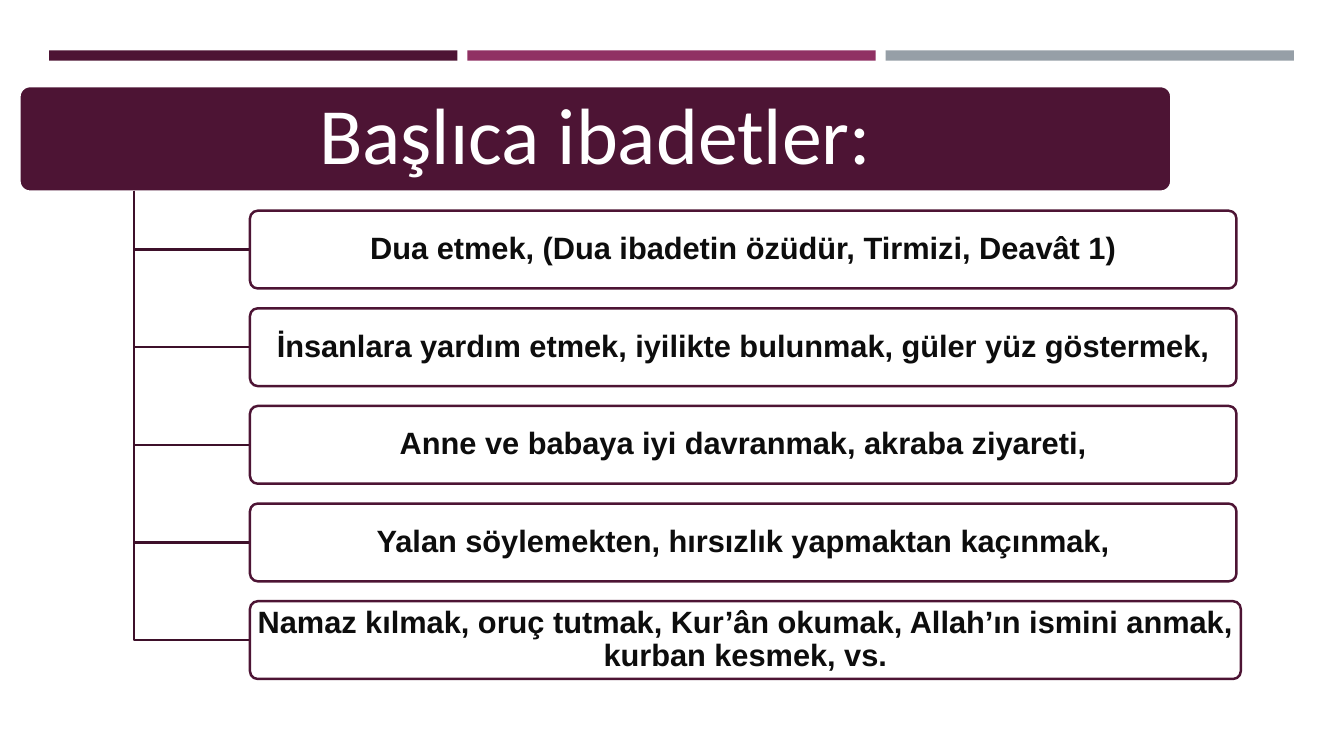
from pptx import Presentation
from pptx.dml.color import RGBColor
from pptx.enum.shapes import MSO_SHAPE
from pptx.enum.text import MSO_ANCHOR, PP_ALIGN
from pptx.oxml.ns import qn
from pptx.util import Cm, Pt
from lxml import etree

RECTANGLE = MSO_SHAPE.RECTANGLE
ROUNDED = MSO_SHAPE.ROUNDED_RECTANGLE
CENTER = PP_ALIGN.CENTER
MIDDLE = MSO_ANCHOR.MIDDLE

COLORS = {
    "plum": "4D1434",
    "magenta": "903163",
    "gray": "969FA7",
    "branch": "3E102A",
    "white": "FFFFFF",
    "ink": "0D0D0D",
}
TITLE = "Başlıca ibadetler:"
WORSHIPS = [
    "Dua etmek, (Dua ibadetin özüdür, Tirmizi, Deavât 1)",
    "İnsanlara yardım etmek, iyilikte bulunmak, güler yüz göstermek,",
    "Anne ve babaya iyi davranmak, akraba ziyareti,",
    "Yalan söylemekten, hırsızlık yapmaktan kaçınmak,",
    "Namaz kılmak, oruç tutmak, Kur’ân okumak, Allah’ın ismini anmak, kurban kesmek, vs.",
]
TRUNK_X, TRUNK_TOP = 3.38, 4.81
BOX_LEFT, BOX_TOP, BOX_HEIGHT, BOX_PITCH = 6.3, 5.31, 1.96, 2.46
BOX_WIDTH, LAST_BOX_WIDTH = 24.86, 24.97


def color(name):
    return RGBColor.from_string(COLORS[name])


def set_line(shape, name):
    shape.line.color.rgb = color(name)
    shape.line.width = Pt(1.75)


def add_block(slide, kind, left, top, width, height, fill):
    shape = slide.shapes.add_shape(kind, Cm(left), Cm(top), Cm(width), Cm(height))
    shape.shadow.inherit = False
    shape.fill.solid()
    shape.fill.fore_color.rgb = color(fill)
    shape.line.fill.background()
    return shape


def add_rounded_block(slide, left, top, width, height, fill, outline):
    shape = add_block(slide, ROUNDED, left, top, width, height, fill)
    shape.adjustments[0] = 0.1
    set_line(shape, outline)
    return shape


def set_opacity(shape, percent):
    fill_color = shape.fill._xPr.find(qn("a:solidFill"))[0]
    etree.SubElement(fill_color, qn("a:alpha"), val=str(percent * 1000))


def write(shape, text, font, size, name, bold, inset_x, inset_y):
    frame = shape.text_frame
    frame.word_wrap = True
    frame.vertical_anchor = MIDDLE
    frame.margin_left = frame.margin_right = Cm(inset_x)
    frame.margin_top = frame.margin_bottom = Cm(inset_y)
    paragraph = frame.paragraphs[0]
    paragraph.alignment = CENTER
    paragraph.line_spacing = 0.9
    run = paragraph.add_run()
    run.text = text
    run.font.name = font
    run.font.size = Pt(size)
    run.font.bold = bold
    run.font.color.rgb = color(name)


def add_branch(slide, end_y):
    builder = slide.shapes.build_freeform(Cm(TRUNK_X), Cm(TRUNK_TOP))
    corner = (Cm(TRUNK_X), Cm(end_y))
    end = (Cm(BOX_LEFT), Cm(end_y))
    builder.add_line_segments([corner, end], close=False)
    shape = builder.convert_to_shape()
    shape.shadow.inherit = False
    shape.fill.background()
    set_line(shape, "branch")


def add_worship(slide, index, text):
    top = BOX_TOP + index * BOX_PITCH
    width = LAST_BOX_WIDTH if index == len(WORSHIPS) - 1 else BOX_WIDTH
    add_branch(slide, top + BOX_HEIGHT / 2)
    box = add_rounded_block(slide, BOX_LEFT, top, width, BOX_HEIGHT, "white", "plum")
    set_opacity(box, 90)
    write(box, text, "Arial", 22, "ink", True, 0.11, 0.08)


def main():
    presentation = Presentation()
    presentation.slide_width = Cm(33.87)
    presentation.slide_height = Cm(19.05)
    slide = presentation.slides.add_slide(presentation.slide_layouts[6])
    for index, fill in enumerate(["plum", "magenta", "gray"]):
        add_block(slide, RECTANGLE, 1.24 + index * 10.54, 1.27, 10.29, 0.26, fill)
    header = add_rounded_block(slide, 0.49, 2.17, 29.03, 2.66, "plum", "white")
    write(header, TITLE, "Calibri", 57, "white", False, 0.3, 0.2)
    for index, text in enumerate(WORSHIPS):
        add_worship(slide, index, text)
    presentation.save("out.pptx")


if __name__ == "__main__":
    main()
